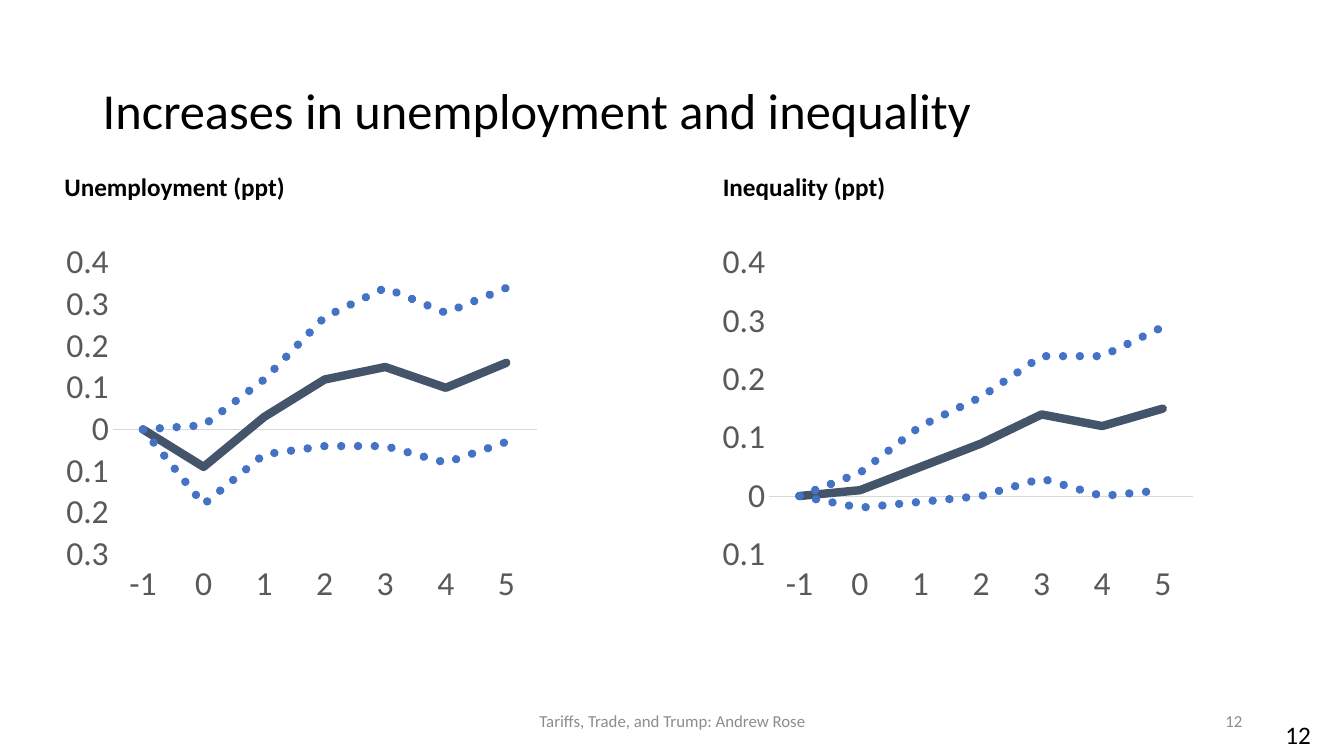
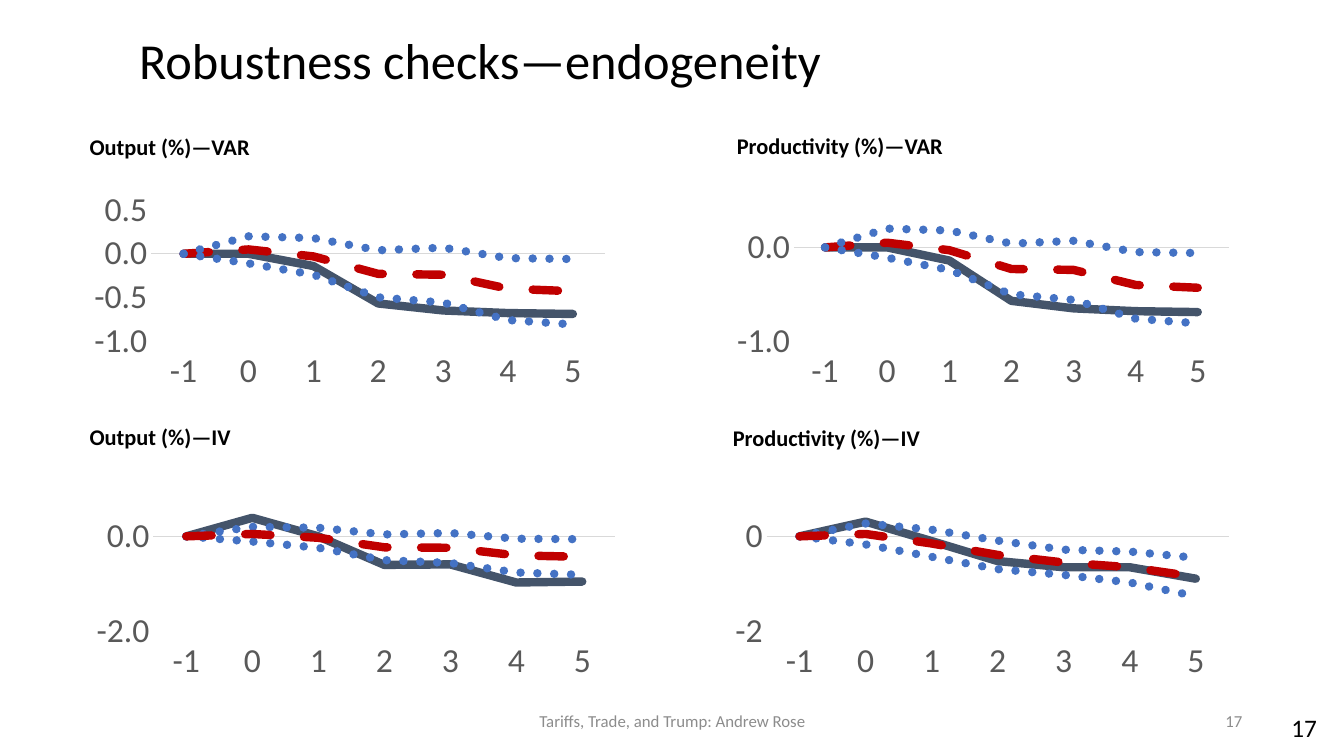
"""Build two slides of line charts on the effects of tariffs."""
from pptx import Presentation
from pptx.chart.data import CategoryChartData
from pptx.dml.color import RGBColor
from pptx.enum.chart import XL_CHART_TYPE, XL_TICK_LABEL_POSITION, XL_TICK_MARK
from pptx.enum.dml import MSO_LINE
from pptx.enum.text import MSO_ANCHOR, PP_ALIGN
from pptx.util import Inches, Pt

LINE = XL_CHART_TYPE.LINE
LOW = XL_TICK_LABEL_POSITION.LOW
NO_TICK = XL_TICK_MARK.NONE
TOP, MIDDLE = MSO_ANCHOR.TOP, MSO_ANCHOR.MIDDLE
LEFT, CENTER, RIGHT = PP_ALIGN.LEFT, PP_ALIGN.CENTER, PP_ALIGN.RIGHT

FONT = "Calibri"
COLORS = {"text": "000000", "footer": "8C8C8C", "label": "595959", "axis": "D9D9D9",
          "estimate": "44546A", "bound": "4472C4", "check": "C00000"}
DASHES = {"estimate": None, "bound": MSO_LINE.ROUND_DOT, "check": MSO_LINE.DASH}
YEARS = ["-1", "0", "1", "2", "3", "4", "5"]
FOOTER = "Tariffs, Trade, and Trump: Andrew Rose"
WHOLE = "0"
ONE_DECIMAL = "#,##0.0"
PLAIN_ZERO = "[>0.01]0.0;[>-0.01]0;0.0"


def add_text(s, text, box, size=18, color="text", bold=False, align=LEFT,
             anchor=TOP, inset=0.1, spacing=1.0):
    tf = s.shapes.add_textbox(*map(Inches, box)).text_frame
    tf.word_wrap = True
    tf.vertical_anchor = anchor
    tf.margin_left = Inches(inset)
    p = tf.paragraphs[0]
    p.alignment = align
    p.line_spacing = spacing
    r = p.add_run()
    r.text = text
    r.font.name = FONT
    r.font.size = Pt(size)
    r.font.bold = bold
    r.font.color.rgb = RGBColor.from_string(COLORS[color])


def add_line_chart(s, box, scale, number_format, series):
    data = CategoryChartData()
    data.categories = YEARS
    for i, (_, values) in enumerate(series, 1):
        data.add_series(f"Series {i}", values)
    chart = s.shapes.add_chart(LINE, *map(Inches, box), data).chart
    chart.has_title = chart.has_legend = False
    chart.font.name = FONT
    chart.font.size = Pt(24)
    chart.font.color.rgb = RGBColor.from_string(COLORS["label"])

    year_axis, value_axis = chart.category_axis, chart.value_axis
    for axis in (year_axis, value_axis):
        axis.major_tick_mark = axis.minor_tick_mark = NO_TICK
        axis.has_major_gridlines = False
    year_axis.tick_label_position = LOW
    year_axis.format.line.color.rgb = RGBColor.from_string(COLORS["axis"])
    year_axis.format.line.width = Pt(0.75)
    value_axis.format.line.fill.background()
    value_axis.minimum_scale, value_axis.maximum_scale, value_axis.major_unit = scale
    value_axis.tick_labels.number_format = number_format
    value_axis.tick_labels.number_format_is_linked = False

    plot = chart.plots[0]
    plot.vary_by_categories = False
    for (role, _), ser in zip(series, plot.series):
        ser.smooth = False
        line = ser.format.line
        line.color.rgb = RGBColor.from_string(COLORS[role])
        line.width = Pt(6)
        if DASHES[role]:
            line.dash_style = DASHES[role]
        ser._element.spPr.ln.set("cap", "rnd")


output_check = ("check", [0, 0.05, -0.03, -0.23, -0.24, -0.4, -0.43])
output_high = ("bound", [0, 0.2, 0.18, 0.04, 0.07, -0.05, -0.06])
output_low = ("bound", [0, -0.11, -0.24, -0.5, -0.56, -0.76, -0.81])
var_series = [("estimate", [0, 0, -0.14, -0.57, -0.65, -0.68, -0.69]),
              output_check, output_high, output_low]

SLIDES = [
    {"title": "Increases in unemployment and inequality", "title_box": (0.92, 0.4, 11.5, 1.45),
     "inset": 0.1, "number": "12", "number_at": (9.99, 7.09), "heading_size": 18,
     "panels": [
         ("Unemployment (ppt)", (0.54, 1.65, 3.75, 0.4), (0.56, 2.33, 4.86, 3.75),
          (-0.3, 0.4, 0.1), PLAIN_ZERO,
          [("estimate", [0, -0.09, 0.03, 0.12, 0.15, 0.1, 0.16]),
           ("bound", [0, -0.18, -0.06, -0.04, -0.04, -0.08, -0.03]),
           ("bound", [0, 0.01, 0.12, 0.27, 0.34, 0.28, 0.34])]),
         ("Inequality (ppt)", (7.07, 1.65, 3.75, 0.4), (7.07, 2.33, 4.86, 3.75),
          (-0.1, 0.4, 0.1), PLAIN_ZERO,
          [("estimate", [0, 0.01, 0.05, 0.09, 0.14, 0.12, 0.15]),
           ("bound", [0, -0.02, -0.01, 0, 0.03, 0, 0.01]),
           ("bound", [0, 0.04, 0.12, 0.17, 0.24, 0.24, 0.29])]),
     ]},
    {"title": "Robustness checks—endogeneity", "title_box": (0, 0, 13.33, 1.25),
     "inset": 1.38, "number": "17", "number_at": (10.05, 7.02), "heading_size": 16,
     "panels": [
         ("Output (%)—VAR", (0.79, 1.27, 5.62, 0.37), (0.83, 1.84, 5.28, 2.09),
          (-1, 0.5, 0.5), ONE_DECIMAL, var_series),
         ("Productivity (%)—VAR", (7.21, 1.26, 5.75, 0.37), (7.21, 1.95, 5.08, 1.98),
          (-1, 0.5, 1), ONE_DECIMAL, var_series),
         ("Output (%)—IV", (0.79, 4.15, 3.75, 0.37), (0.85, 4.81, 5.36, 2),
          (-2, 1, 2), ONE_DECIMAL,
          [("estimate", [0, 0.39, 0, -0.6, -0.59, -0.97, -0.95]),
           output_low, output_high, output_check]),
         ("Productivity (%)—IV", (7.17, 4.16, 5.29, 0.37), (7.19, 4.81, 5.1, 2),
          (-2, 1, 2), WHOLE,
          [("estimate", [0, 0.31, -0.1, -0.52, -0.65, -0.65, -0.89]),
           ("bound", [0, -0.17, -0.43, -0.69, -0.81, -0.97, -1.26]),
           ("bound", [0, 0.27, 0.14, -0.09, -0.28, -0.32, -0.45]),
           ("check", [0, 0.05, -0.15, -0.39, -0.55, -0.65, -0.85])]),
     ]},
]

prs = Presentation()
prs.slide_width, prs.slide_height = Inches(13.33), Inches(7.5)
for content in SLIDES:
    s = prs.slides.add_slide(prs.slide_layouts[6])
    add_text(s, content["title"], content["title_box"], size=36, anchor=MIDDLE,
             inset=content["inset"], spacing=0.9)
    for heading, heading_box, chart_box, scale, number_format, series in content["panels"]:
        add_text(s, heading, heading_box, size=content["heading_size"], bold=True)
        add_line_chart(s, chart_box, scale, number_format, series)
    add_text(s, content["number"], (*content["number_at"], 3.11, 0.4), align=RIGHT)
    add_text(s, FOOTER, (4.42, 6.95, 4.5, 0.4), size=12, color="footer",
             align=CENTER, anchor=MIDDLE)
    add_text(s, content["number"], (9.42, 6.95, 3, 0.4), size=12, color="footer",
             align=RIGHT, anchor=MIDDLE)

prs.save("out.pptx")
